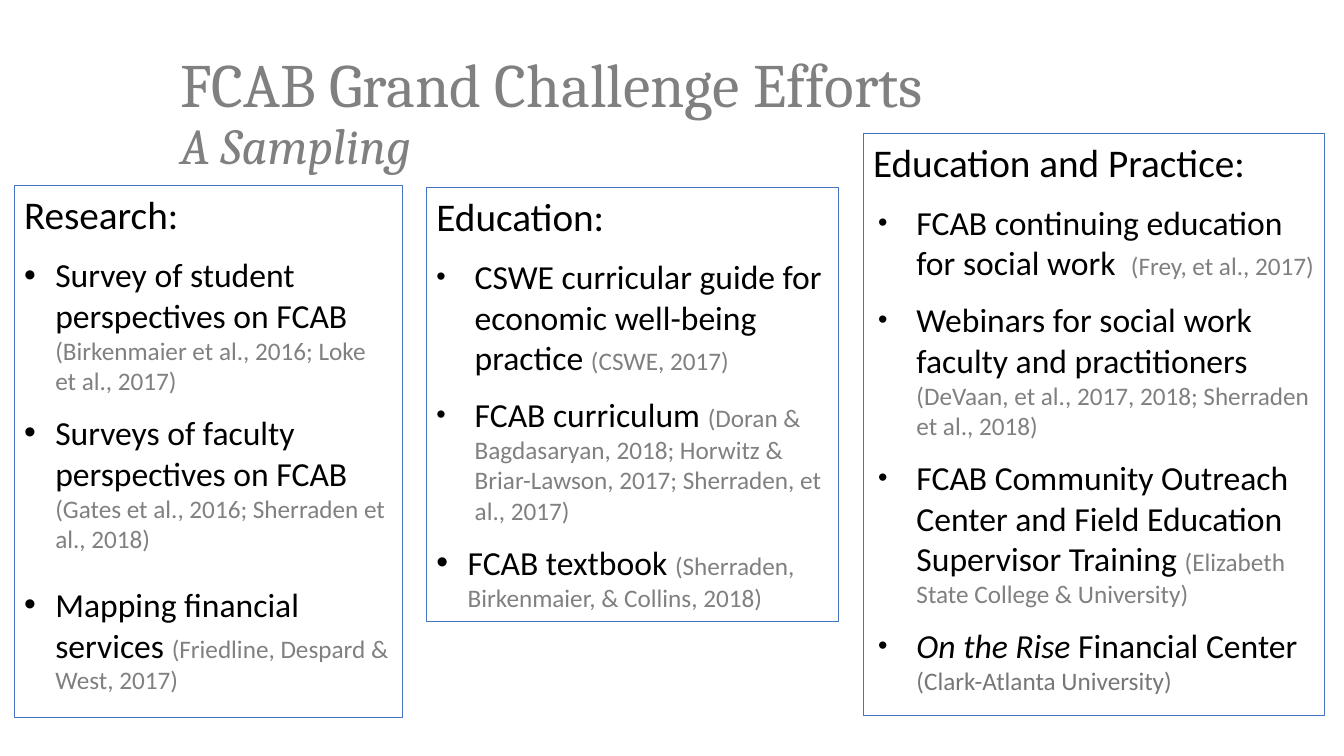
from dataclasses import dataclass

from lxml.etree import SubElement
from pptx import Presentation
from pptx.dml.color import RGBColor
from pptx.enum.text import MSO_ANCHOR, MSO_AUTO_SIZE, PP_ALIGN
from pptx.oxml.ns import qn
from pptx.util import Inches, Pt

BLACK = RGBColor(0x00, 0x00, 0x00)
GREY = RGBColor(0x80, 0x80, 0x80)
DARK = RGBColor(0x77, 0x77, 0x77)
BLUE = RGBColor(0x44, 0x72, 0xC4)

FRAME = {"word_wrap": True, "auto_size": MSO_AUTO_SIZE.NONE,
         "vertical_anchor": MSO_ANCHOR.TOP,
         "margin_left": Inches(0.1), "margin_right": Inches(0.1),
         "margin_top": Inches(0.05), "margin_bottom": Inches(0.05)}


@dataclass
class Item:
    text: str
    cite: str
    lead: str = ""
    left: float = 0.31
    hang: float = 0.31
    size: int = 100
    after: float = 12
    tint: RGBColor = GREY


@dataclass
class Panel:
    box: tuple[float, float, float, float]
    head: str
    items: list[Item]
    body: bool = False


SMALL = {"left": 0.38, "hang": 0.38, "size": 80}
WIDE = {"left": 0.43, "hang": 0.38, "size": 80}

PANELS = [
    Panel((8.56, 1.32, 4.58, 5.78), "Education and Practice:", [
        Item("FCAB continuing education for social work  ",
             "(Frey, et al., 2017)", **WIDE),
        Item("Webinars for social work faculty and practitioners ",
             "(DeVaan, et al., 2017, 2018; Sherraden et al., 2018)", **WIDE),
        Item("FCAB Community Outreach Center and Field Education "
             "Supervisor Training ",
             "(Elizabeth State College & University)", **WIDE),
        Item("Financial Center ", "(Clark-Atlanta University)",
             lead="On the Rise ", tint=DARK, **WIDE),
    ], body=True),
    Panel((4.23, 1.86, 4.09, 4.31), "Education:", [
        Item("CSWE curricular guide for economic well-being practice ",
             "(CSWE, 2017)", **SMALL),
        Item("FCAB curriculum ",
             "(Doran & Bagdasaryan, 2018; Horwitz & Briar-Lawson, 2017; "
             "Sherraden, et al., 2017)", **SMALL),
        Item("FCAB textbook ", "(Sherraden, Birkenmaier, & Collins, 2018)",
             after=0),
    ]),
    Panel((0.14, 1.84, 3.85, 5.28), "Research:", [
        Item("Survey of student perspectives on FCAB ",
             "(Birkenmaier et al., 2016; Loke et al., 2017)"),
        Item("Surveys of faculty perspectives on FCAB ",
             "(Gates et al., 2016; Sherraden et al., 2018)", after=22),
        Item("Mapping financial services ",
             "(Friedline, Despard & West, 2017)", after=0),
    ]),
]


def apply(target, values: dict) -> None:
    for name, value in values.items():
        setattr(target, name, value)


def place(shape, box: tuple[float, float, float, float]) -> None:
    sides = map(Inches, box)
    apply(shape, dict(zip(("left", "top", "width", "height"), sides)))
    apply(shape.text_frame, FRAME)


def write(para, text: str, size: int, tint: RGBColor = BLACK,
          face: str = "Calibri", slant: bool = False) -> None:
    run = para.add_run()
    run.text = text
    apply(run.font, {"size": Pt(size), "name": face, "italic": slant})
    run.font.color.rgb = tint


def indent(para, left: float, hang: float, size: int) -> None:
    """Give the paragraph a round bullet, or none when hang is zero."""
    props = para._p.get_or_add_pPr()
    props.set("marL", str(Inches(left)))
    props.set("indent", str(-Inches(hang)))
    if not hang:
        SubElement(props, qn("a:buNone"))
        return
    tint = SubElement(props, qn("a:buClr"))
    SubElement(tint, qn("a:srgbClr"), val=str(BLACK))
    SubElement(props, qn("a:buSzPct"), val=str(size * 1000))
    SubElement(props, qn("a:buFont"), typeface="Arial")
    SubElement(props, qn("a:buChar"), char="•")


def space(para, after: float) -> None:
    apply(para, {"space_before": Pt(0), "space_after": Pt(after),
                 "alignment": PP_ALIGN.LEFT})


def draw(slide, panel: Panel) -> None:
    if panel.body:
        shape = slide.placeholders[1]
    else:
        shape = slide.shapes.add_textbox(0, 0, 0, 0)
    place(shape, panel.box)
    shape.line.color.rgb = BLUE
    shape.line.width = Pt(0.75)
    frame = shape.text_frame
    head = frame.paragraphs[0]
    indent(head, 0, 0, 100)
    space(head, 12)
    write(head, panel.head, 28)
    for item in panel.items:
        para = frame.add_paragraph()
        indent(para, item.left, item.hang, item.size)
        space(para, item.after)
        if item.lead:
            write(para, item.lead, 24, slant=True)
        write(para, item.text, 24)
        write(para, item.cite, 18, item.tint)


def main() -> None:
    deck = Presentation()
    apply(deck, {"slide_width": Inches(13.33), "slide_height": Inches(7.5)})
    slide = deck.slides.add_slide(deck.slide_layouts[1])
    title = slide.shapes.title
    place(title, (1.69, 0.49, 10.34, 0.83))
    para = title.text_frame.paragraphs[0]
    apply(para, {"alignment": PP_ALIGN.LEFT, "line_spacing": 0.9})
    write(para, "FCAB Grand Challenge Efforts", 44, GREY, "Cambria")
    para.add_line_break()
    write(para, "A Sampling", 36, GREY, "Cambria", True)
    for panel in PANELS:
        draw(slide, panel)
    deck.save("out.pptx")


if __name__ == "__main__":
    main()
